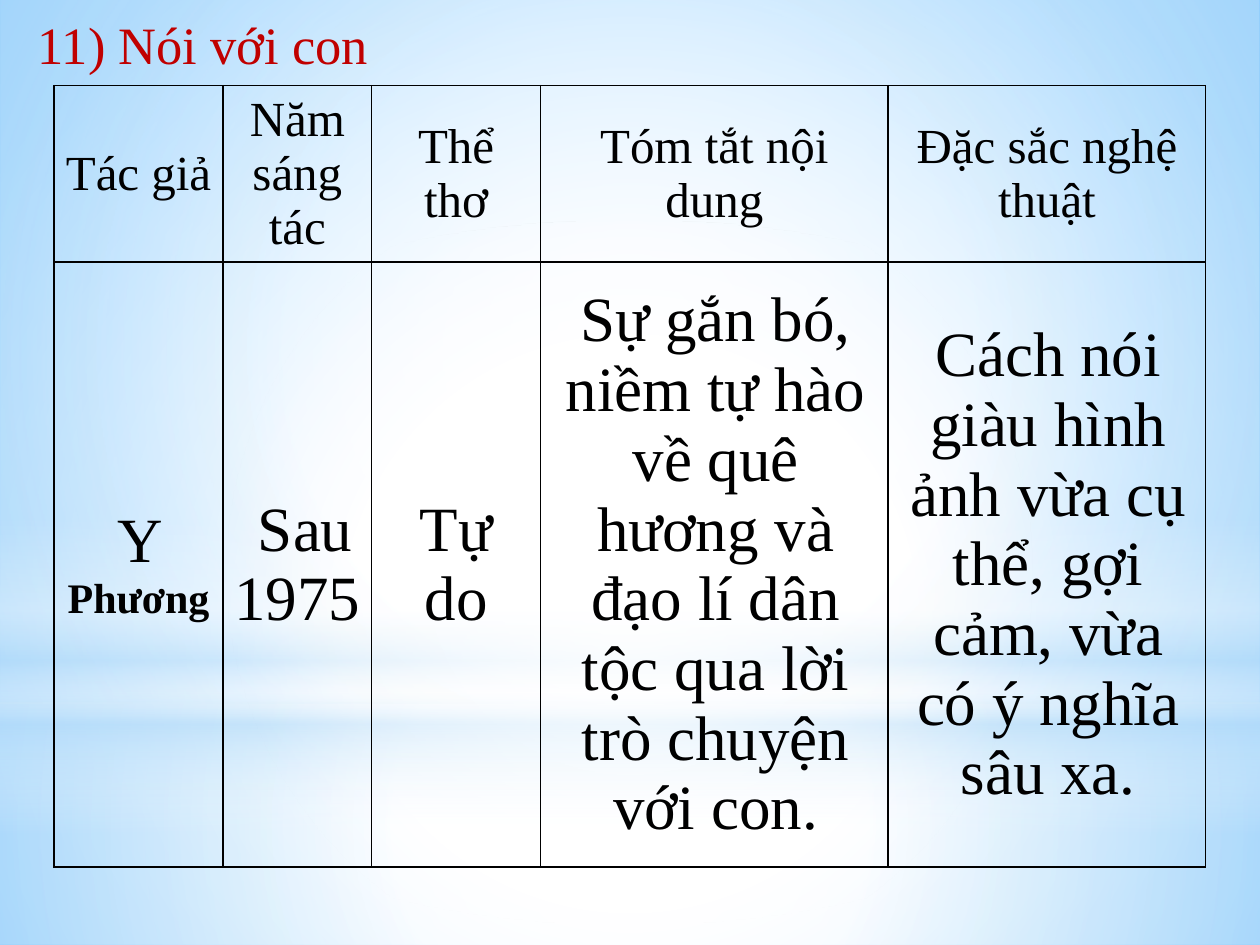
from lxml import etree
from pptx import Presentation
from pptx.dml.color import RGBColor
from pptx.enum.shapes import MSO_SHAPE as Preset
from pptx.enum.text import MSO_ANCHOR as Anchor, MSO_AUTO_SIZE as AutoSize, PP_ALIGN as Align
from pptx.oxml.ns import qn
from pptx.util import Inches, Pt

FONT = "Times New Roman"
CENTER = (50, 50, 50, 50)
WHITE, PALE, SKY = "FFFFFF", "B4DCFA", "63BCFF"

# Backdrop layers: preset, box, stops (position, colour, opacity), focus (None = vertical)
LAYERS = [
    (Preset.RECTANGLE, (0, 5.58, 10, 1.92),
     [(0, WHITE, 91), (37, WHITE, 76), (100, PALE, 79)], CENTER),
    (Preset.RECTANGLE, (0, 0, 10, 5.58),
     [(0, WHITE, 89), (48, WHITE, 62), (100, PALE, 79)], CENTER),
    (Preset.RECTANGLE, (0, 4.12, 10, 2.5),
     [(0, WHITE, 0), (29, WHITE, 30), (45, PALE, 40),
      (55, WHITE, 26), (65, PALE, 60), (100, WHITE, 0)], None),
    (Preset.OVAL, (0, 1.75, 10, 5.58),
     [(0, WHITE, 100), (56, WHITE, 0)], CENTER),
]

COLUMN_WIDTHS = [1.34, 1.18, 1.34, 2.76, 2.52]
ROW_HEIGHTS = [1.4, 4.8]
HEADINGS = ["Tác giả", "Năm sáng tác", "Thể thơ", "Tóm tắt nội dung", "Đặc sắc nghệ thuật"]
# Each cell is a list of runs: text, size, bold
POEM = [
    [("Y ", 36, False), ("Phương", 24, True)],
    [(" Sau 1975", 36, False)],
    [("Tự do", 36, False)],
    [("Sự gắn bó, niềm tự hào về quê hương và đạo lí dân tộc qua lời trò chuyện với con.",
      36, False)],
    [("Cách nói giàu hình ảnh vừa cụ thể, gợi cảm, vừa có ý nghĩa sâu xa.", 36, False)],
]
INDENTED_COLUMNS = (3, 4)


def rgb(value):
    return RGBColor.from_string(value)


def set_all(target, values):
    for name, value in values.items():
        setattr(target, name, value)


def add_element(parent, tag, **attributes):
    return etree.SubElement(parent, qn(tag), {k: str(v) for k, v in attributes.items()})


def add_run(paragraph, text, size, bold=False, color="000000"):
    run = paragraph.add_run()
    run.text = text
    set_all(run.font, {"name": FONT, "size": Pt(size), "bold": bold})
    run.font.color.rgb = rgb(color)


def apply_gradient(properties, stops, focus):
    """Replace the empty fill in the given properties by a gradient."""
    empty_fill = properties.find(qn("a:noFill"))
    gradient = etree.Element(qn("a:gradFill"), rotWithShape="1")
    stop_list = add_element(gradient, "a:gsLst")
    for position, color, opacity in stops:
        stop = add_element(stop_list, "a:gs", pos=position * 1000)
        tint = add_element(stop, "a:srgbClr", val=color)
        if opacity < 100:
            add_element(tint, "a:alpha", val=opacity * 1000)
    if focus is None:
        add_element(gradient, "a:lin", ang=90 * 60000, scaled=0)
    else:
        circle = add_element(gradient, "a:path", path="circle")
        sides = {side: value * 1000 for side, value in zip("ltrb", focus)}
        add_element(circle, "a:fillToRect", **sides)
    properties.replace(empty_fill, gradient)


def add_backdrop(slide):
    # Sky gradient behind everything
    slide.background.fill.background()
    background = slide.element.find(".//" + qn("p:bgPr"))
    apply_gradient(background, [(0, WHITE, 100), (36, WHITE, 100), (100, SKY, 100)],
                   (24, 44, 24, 12))
    # Translucent light layers
    for preset, box, stops, focus in LAYERS:
        layer = slide.shapes.add_shape(preset, *map(Inches, box))
        layer.shadow.inherit = False
        layer.fill.background()
        layer.line.fill.background()
        apply_gradient(layer.element.spPr, stops, focus)


def add_title(slide, box):
    frame = slide.shapes.add_textbox(*map(Inches, box)).text_frame
    set_all(frame, {"word_wrap": False, "auto_size": AutoSize.SHAPE_TO_FIT_TEXT})
    add_run(frame.paragraphs[0], "11) Nói với con", 30, color="C00000")


def add_borders(cell):
    properties = cell._tc.get_or_add_tcPr()
    for side in ("a:lnL", "a:lnR", "a:lnT", "a:lnB"):
        border = add_element(properties, side, w=Pt(1))
        add_element(add_element(border, "a:solidFill"), "a:srgbClr", val="000000")


def add_poem_table(slide, box):
    rows = [[[(heading, 28, False)] for heading in HEADINGS], POEM]
    table = slide.shapes.add_table(len(rows), len(HEADINGS), *map(Inches, box)).table
    set_all(table, {"first_row": False, "horz_banding": False})
    for column, width in zip(table.columns, COLUMN_WIDTHS):
        column.width = Inches(width)
    for row, height in zip(table.rows, ROW_HEIGHTS):
        row.height = Inches(height)
    for r, row in enumerate(rows):
        for c, runs in enumerate(row):
            cell = table.cell(r, c)
            add_borders(cell)
            cell.fill.background()
            set_all(cell, {"vertical_anchor": Anchor.MIDDLE,
                           "margin_left": Inches(0.07), "margin_right": Inches(0.07),
                           "margin_top": 0, "margin_bottom": 0})
            paragraph = cell.text_frame.paragraphs[0]
            paragraph.alignment = Align.CENTER
            if r == 1 and c in INDENTED_COLUMNS:
                paragraph._p.get_or_add_pPr().set("marL", str(Inches(0.02)))
            for run in runs:
                add_run(paragraph, *run)


def main():
    deck = Presentation()
    set_all(deck, {"slide_width": Inches(10), "slide_height": Inches(7.5)})
    slide = deck.slides.add_slide(deck.slide_layouts[6])
    add_backdrop(slide)
    add_title(slide, (0.2, 0.05, 2.85, 0.61))
    add_poem_table(slide, (0.43, 0.68, sum(COLUMN_WIDTHS), sum(ROW_HEIGHTS)))
    deck.save("out.pptx")


if __name__ == "__main__":
    main()
